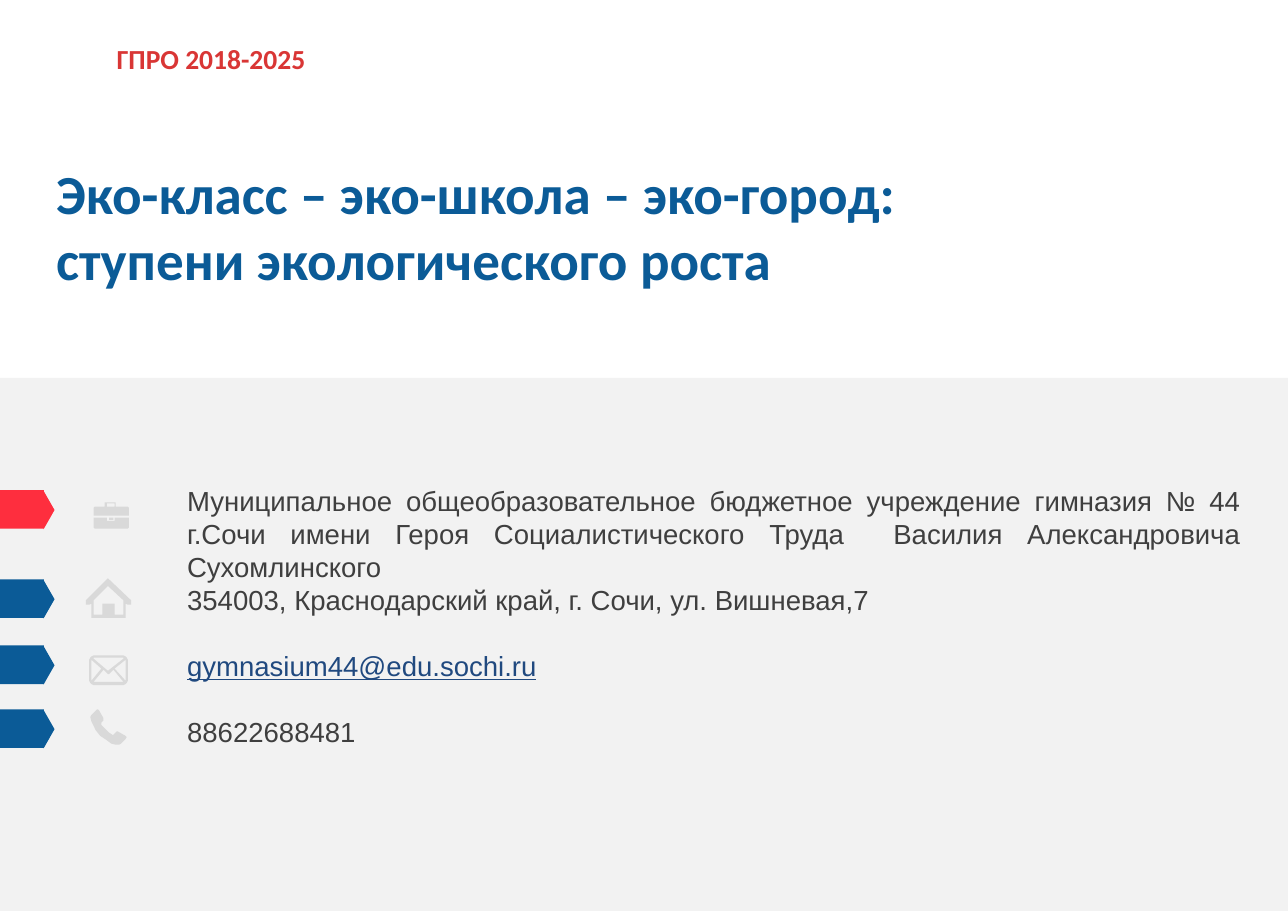
from pptx import Presentation
from pptx.dml.color import RGBColor
from pptx.enum.shapes import MSO_SHAPE as Shape
from pptx.enum.text import MSO_ANCHOR as Anchor, PP_ALIGN as Align
from pptx.util import Pt

PX = 9144  # EMU in one px, 100 px to the inch
PAGE_SIZE = (1169, 827)

WHITE = RGBColor(0xFF, 0xFF, 0xFF)
PANEL_GREY = RGBColor(0xF2, 0xF2, 0xF2)
ICON_GREY = RGBColor(0xD9, 0xD9, 0xD9)
TEXT_GREY = RGBColor(0x3F, 0x3F, 0x3F)
BLUE = RGBColor(0x0B, 0x5B, 0x97)
LINK_BLUE = RGBColor(0x20, 0x49, 0x7F)
RED = RGBColor(0xFE, 0x2E, 0x3E)
HEADER_RED = RGBColor(0xD9, 0x36, 0x35)

# Content
HEADER = "ГПРО 2018-2025"
TITLE = "Эко-класс – эко-школа – эко-город: ступени экологического роста"
LINE = Pt(21.6)
CONTACTS = [  # text, colour, underlined, space before
    ("Муниципальное общеобразовательное бюджетное учреждение гимназия № 44 "
     "г.Сочи имени Героя Социалистического Труда  Василия Александровича "
     "Сухомлинского", TEXT_GREY, False, 0),
    ("354003, Краснодарский край, г. Сочи, ул. Вишневая,7", TEXT_GREY, False, 0),
    ("gymnasium44@edu.sochi.ru", LINK_BLUE, True, LINE),
    ("88622688481", TEXT_GREY, False, LINE),
]
TAGS = [(445, RED), (526, BLUE), (586, BLUE), (644, BLUE)]  # top, colour

# Icon outlines: a list of closed contours each, inner ones being holes
CASE_BOTTOM = [
    [(104, 473), (97, 473), (97, 470), (85, 470), (85, 479), (86, 480),
     (116, 480), (117, 479), (117, 470), (104, 470)],
]
CASE_TOP = [
    [(115, 460), (105, 460), (105, 456), (95, 456), (95, 460), (86, 460),
     (85, 461), (85, 468), (117, 468), (117, 461), (116, 460)],
    [(97, 460), (97, 457), (104, 457), (104, 460)],
]
HOUSE = [
    [(119, 545), (98, 525), (78, 545), (78, 549), (81, 549), (83, 548),
     (83, 561), (114, 561), (114, 548), (116, 549), (119, 549)],
    [(112, 558), (104, 558), (104, 548), (93, 548), (93, 558), (85, 558),
     (85, 545), (98, 532), (112, 545)],
]
PHONE = [
    [(115, 669), (114, 671), (110, 675), (108, 676), (105, 676), (101, 675),
     (97, 672), (91, 668), (87, 663), (85, 659), (83, 655), (82, 651),
     (83, 649), (88, 644), (89, 644), (90, 645), (94, 652), (94, 654),
     (92, 656), (92, 658), (94, 660), (96, 662), (99, 665), (102, 667),
     (103, 667), (105, 665), (106, 664), (107, 664), (114, 668)],
]
ENVELOPE = [
    [(112, 595), (85, 595), (83, 596), (82, 597), (81, 599), (81, 618),
     (82, 620), (83, 621), (85, 622), (112, 622), (114, 621), (115, 620),
     (116, 618), (116, 599), (115, 597), (114, 596)],
    [(104, 607), (114, 599), (114, 618)],
    [(112, 597), (112, 598), (98, 609), (85, 598), (85, 597)],
    [(83, 618), (83, 599), (92, 607)],
    [(85, 619), (94, 608), (98, 612), (99, 612), (103, 608), (112, 619)],
]


def paint(shape, colour):
    shape.shadow.inherit = False
    shape.fill.solid()
    shape.fill.fore_color.rgb = colour
    shape.line.fill.background()
    return shape


def add_block(shapes, kind, bounds, colour):
    return paint(shapes.add_shape(kind, *(v * PX for v in bounds)), colour)


def add_icon(shapes, contours):
    builder = shapes.build_freeform(*contours[0][0], scale=PX)
    builder.add_line_segments(contours[0][1:])
    for hole in contours[1:]:
        builder.move_to(*hole[0])
        builder.add_line_segments(hole[1:])
    return paint(builder.convert_to_shape(), ICON_GREY)


def add_box(bounds, wrap=True):
    box = page.shapes.add_textbox(*(v * PX for v in bounds))
    box.text_frame.word_wrap = wrap
    return box.text_frame


def add_span(para, text, font, size, colour, bold=False, underline=False):
    span = para.add_run()
    span.text = text
    span.font.name, span.font.size = font, Pt(size)
    span.font.bold, span.font.underline = bold, underline
    span.font.color.rgb = colour


deck = Presentation()
deck.slide_width, deck.slide_height = (v * PX for v in PAGE_SIZE)
page = deck.slides.add_slide(deck.slide_layouts[6])
page.background.fill.solid()
page.background.fill.fore_color.rgb = WHITE

# Header, grey panel and title
header = add_box((96, 33, 192, 40), wrap=False)
add_span(header.paragraphs[0], HEADER, "Calibri", 18, HEADER_RED, bold=True)
add_block(page.shapes, Shape.RECTANGLE, (0, 343, 1169, 484), PANEL_GREY)
title = add_box((20, 91, 866, 228))
title.vertical_anchor = Anchor.MIDDLE
title.margin_left = 31 * PX
title.margin_right = 11 * PX
add_span(title.paragraphs[0], TITLE, "Calibri", 36, BLUE, bold=True)

# Contact lines
contacts = add_box((160, 434, 976, 252))
for index, (text, colour, underline, gap) in enumerate(CONTACTS):
    para = contacts.add_paragraph() if index else contacts.paragraphs[0]
    para.alignment = Align.JUSTIFY
    para.line_spacing = LINE
    if gap:
        para.space_before = gap
    add_span(para, text, "Arial", 18, colour, underline=underline)

# Pointed tags on the left edge
tags = page.shapes.add_group_shape().shapes
for top, colour in TAGS:
    add_block(tags, Shape.RECTANGLE, (0, top, 40, 35), colour)
    tip = add_block(tags, Shape.ISOSCELES_TRIANGLE, (27, top + 13, 35, 10), colour)
    tip.rotation = 90

# Icons
case = page.shapes.add_group_shape().shapes
add_icon(case, CASE_BOTTOM)
add_icon(case, CASE_TOP)
add_block(case, Shape.RECTANGLE, (99, 470, 4, 2), ICON_GREY)
for outline in (HOUSE, PHONE, ENVELOPE):
    add_icon(page.shapes, outline)

deck.save("out.pptx")
